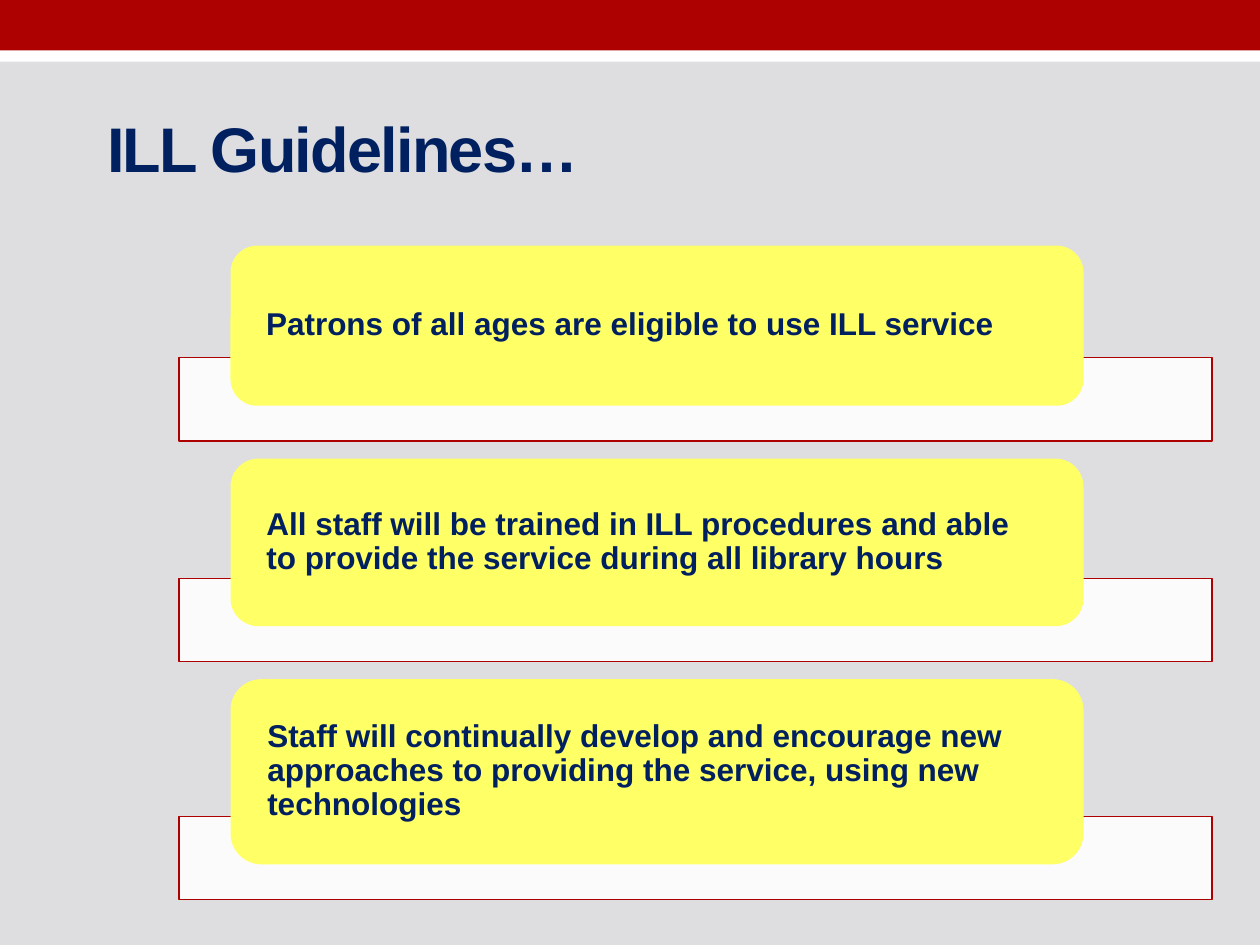
from lxml.etree import SubElement
from pptx import Presentation
from pptx.dml.color import RGBColor
from pptx.enum.shapes import MSO_SHAPE
from pptx.enum.text import MSO_ANCHOR, PP_ALIGN
from pptx.oxml.ns import qn
from pptx.util import Inches, Pt

TITLE = "ILL Guidelines…"
RULES = [  # text, card height
    ("Patrons of all ages are eligible to use ILL service", 1.27),
    ("All staff will be trained in ILL procedures and able to "
     "provide the service during all library hours", 1.33),
    ("Staff will continually develop and encourage new approaches "
     "to providing the service, using new technologies", 1.47),
]
RED, NAVY, YELLOW, WHITE, GREY = "AD0101", "002060", "FFFF66", "FFFFFF", "DEDEE0"
TOP, BAR, LAP, GAP = 1.95, 0.66, 0.38, 0.14


def paint(fill, color):
    fill.solid()
    fill.fore_color.rgb = RGBColor.from_string(color)


def block(kind, box, color):
    shape = slide.shapes.add_shape(kind, *map(Inches, box))
    shape.shadow.inherit = False
    paint(shape.fill, color)
    shape.line.fill.background()
    return shape


def write(frame, text, size):
    frame.text = text
    frame.word_wrap = True
    frame.vertical_anchor = MSO_ANCHOR.MIDDLE
    para = frame.paragraphs[0]
    para.alignment = PP_ALIGN.LEFT
    font = para.runs[0].font
    font.name, font.size, font.bold = "Arial", Pt(size), True
    paint(font.fill, NAVY)
    return para


deck = Presentation()
deck.slide_width, deck.slide_height = Inches(10), Inches(7.5)
slide = deck.slides.add_slide(deck.slide_layouts[5])
paint(slide.background.fill, GREY)

# Top bands
block(MSO_SHAPE.RECTANGLE, (0, 0.24, 10, 0.25), WHITE)
block(MSO_SHAPE.RECTANGLE, (0, 0, 10, 0.4), RED)

# Title
title = slide.shapes.title
title.left, title.top, title.width, title.height = map(Inches, (0.75, 0.67, 9, 1))
para = write(title.text_frame, TITLE, 36)
para.runs[0].font._element.set("spc", "-100")

# Each card overlaps the bar below it
top = TOP
for text, high in RULES:
    low = top + high - LAP
    bar = block(MSO_SHAPE.RECTANGLE, (1.42, low, 8.2, BAR), WHITE)
    tint = bar.fill._xPr.find(qn("a:solidFill"))[0]
    SubElement(tint, qn("a:alpha"), val="90000")
    paint(bar.line.fill, RED)
    bar.line.width = Pt(0.75)

    card = block(MSO_SHAPE.ROUNDED_RECTANGLE, (1.83, top, 6.77, high), YELLOW)
    frame = card.text_frame
    frame.margin_left = frame.margin_right = Inches(0.22)
    frame.margin_top = frame.margin_bottom = 0
    write(frame, text, 18).line_spacing = 0.9
    top = low + BAR + GAP

deck.save("out.pptx")
